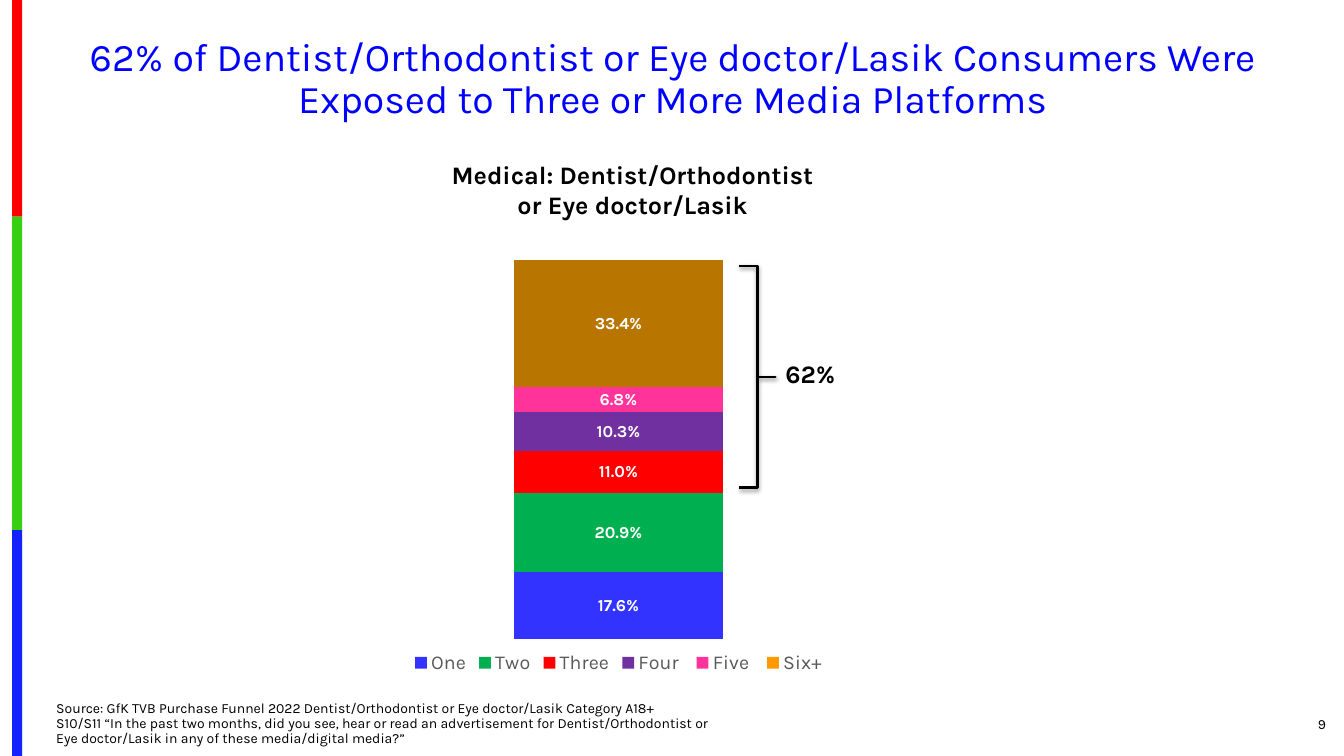
from dataclasses import dataclass

from lxml import etree
from pptx import Presentation
from pptx import util as u
from pptx.chart.data import CategoryChartData
from pptx.dml.color import RGBColor
from pptx.enum import chart as ch, shapes, text
from pptx.oxml import parse_xml
from pptx.oxml.ns import nsdecls, qn

PX = 9144  # 100 px to the inch
FONT = "Karla"
PERCENT = "0.0%"


@dataclass
class Stripe:
    height: int
    color: str


@dataclass
class Platform:
    name: str
    share: float
    color: str
    bar_color: str = ""


@dataclass
class Label:
    lines: list[str]
    box: tuple[int, int, int, int]
    size: int
    color: str = "000000"
    bold: bool = False
    align: text.PP_ALIGN = text.PP_ALIGN.LEFT
    anchor: text.MSO_ANCHOR = text.MSO_ANCHOR.TOP
    spacing: float = 1.0


STRIPES = [Stripe(215, "FE0000"), Stripe(311, "36CF12"), Stripe(224, "1322FE")]

PLATFORMS = [
    Platform("One", 0.176, "3333FF"),
    Platform("Two", 0.209, "00B050"),
    Platform("Three", 0.11, "FF0000"),
    Platform("Four ", 0.103, "7030A0"),
    Platform("Five ", 0.068, "FF3399"),
    Platform("Six+", 0.334, "FF9900", "B87600"),
]

LABELS = [
    Label(["62% of Dentist/Orthodontist or Eye doctor/Lasik Consumers Were "
           "Exposed to Three or More Media Platforms"],
          (46, 32, 1242, 95), 28, "0000FF", align=text.PP_ALIGN.CENTER, spacing=0.9),
    Label(["9"], (1217, 698, 108, 40), 10, align=text.PP_ALIGN.RIGHT,
          anchor=text.MSO_ANCHOR.MIDDLE),
    Label(["Source: GfK TVB Purchase Funnel 2022 Dentist/Orthodontist or "
           "Eye doctor/Lasik Category A18+",
           "S10/S11 “In the past two months, did you see, hear or read an "
           "advertisement for Dentist/Orthodontist or Eye doctor/Lasik in any "
           "of these media/digital media?”"],
          (46, 690, 676, 56), 10, anchor=text.MSO_ANCHOR.BOTTOM, spacing=0.9),
    Label(["Medical: Dentist/Orthodontist ", "or Eye doctor/Lasik "],
          (372, 153, 517, 71), 18, bold=True, align=text.PP_ALIGN.CENTER),
    Label(["62%"], (769, 351, 90, 40), 18, bold=True),
]


def px(*lengths: int) -> list[u.Emu]:
    return [u.Emu(length * PX) for length in lengths]


def paint(color_holder, color: str) -> None:
    """Set a solid colour on a fill."""
    color_holder.solid()
    color_holder.fore_color.rgb = RGBColor.from_string(color)


def style_font(font, size: int, color: str, bold: bool = False) -> None:
    font.name = FONT
    font.size = u.Pt(size)
    font.bold = bold
    paint(font.fill, color)


def draw_stripes(slide, stripes: list[Stripe]) -> None:
    top = 0
    for stripe in stripes:
        bar = slide.shapes.add_shape(shapes.MSO_SHAPE.RECTANGLE,
                                     *px(12, top, 10, stripe.height))
        bar.shadow.inherit = False
        paint(bar.fill, stripe.color)
        bar.line.fill.background()
        top += stripe.height


def draw_label(slide, label: Label) -> None:
    frame = slide.shapes.add_textbox(*px(*label.box)).text_frame
    frame.word_wrap = True
    frame.vertical_anchor = label.anchor
    for index, line in enumerate(label.lines):
        paragraph = frame.add_paragraph() if index else frame.paragraphs[0]
        paragraph.text = line
        paragraph.alignment = label.align
        paragraph.line_spacing = label.spacing
        style_font(paragraph.font, label.size, label.color, label.bold)


def fix_plot_area(chart, **fractions: float) -> None:
    """Pin the inner plot area to fractions (x, y, w, h) of the chart."""
    plot_area = chart.plots[0]._element.getparent()
    for layout in plot_area.findall(qn("c:layout")):
        plot_area.remove(layout)
    modes = '<c:xMode val="edge"/><c:yMode val="edge"/>'
    sizes = "".join(f'<c:{key} val="{value}"/>' for key, value in fractions.items())
    plot_area.insert(0, parse_xml(
        f'<c:layout {nsdecls("c")}><c:manualLayout><c:layoutTarget val="inner"/>'
        f"{modes}{sizes}</c:manualLayout></c:layout>"))


def draw_platform_chart(slide, platforms: list[Platform]) -> None:
    data = CategoryChartData(number_format=PERCENT)
    data.categories = ["1"]
    for platform in platforms:
        data.add_series(platform.name, [platform.share])
    chart = slide.shapes.add_chart(ch.XL_CHART_TYPE.COLUMN_STACKED,
                                   *px(338, 183, 551, 490), data).chart
    chart.has_title = False
    style_font(chart.font, 10, "000000")
    chart.category_axis.visible = False
    shares = chart.value_axis
    shares.visible = False
    shares.has_major_gridlines = False
    shares.minimum_scale, shares.maximum_scale = 0, 1.2

    chart.has_legend = True
    chart.legend.position = ch.XL_LEGEND_POSITION.BOTTOM
    chart.legend.include_in_layout = False
    style_font(chart.legend.font, 14, "595959")

    column = chart.plots[0]
    column.gap_width, column.overlap = 150, 100
    column.vary_by_categories = False
    for series, platform in zip(column.series, platforms):
        paint(series.format.fill, platform.color)
        if platform.bar_color:
            paint(series.points[0].format.fill, platform.bar_color)
        values = series.data_labels
        values.show_value = True
        values.number_format = PERCENT
        values.number_format_is_linked = False
        values.position = ch.XL_LABEL_POSITION.CENTER
        style_font(values.font, 12, "FFFFFF", bold=True)
    fix_plot_area(chart, x=0.03, y=0, w=0.94, h=0.92)


def draw_brace(slide) -> None:
    """Square bracket spanning three or more platforms, with a soft shadow."""
    brace = slide.shapes.add_shape(shapes.MSO_SHAPE.RIGHT_BRACE, *px(733, 264, 36, 220))
    brace.adjustments[0], brace.adjustments[1] = 0, 0.5
    brace.fill.background()
    paint(brace.line.fill, "000000")
    brace.line.width = u.Pt(2)
    brace.shadow.inherit = False
    effects = brace._element.spPr.find(qn("a:effectLst"))
    shadow = etree.SubElement(effects, qn("a:outerShdw"), blurRad="40000",
                              dist="20000", dir="5400000", rotWithShape="0")
    black = etree.SubElement(shadow, qn("a:srgbClr"), val="000000")
    etree.SubElement(black, qn("a:alpha"), val="38000")


def main() -> None:
    deck = Presentation()
    deck.slide_width, deck.slide_height = px(1333, 750)
    slide = deck.slides.add_slide(deck.slide_layouts[6])
    draw_stripes(slide, STRIPES)
    draw_platform_chart(slide, PLATFORMS)
    for label in LABELS:
        draw_label(slide, label)
    draw_brace(slide)
    deck.save("out.pptx")


if __name__ == "__main__":
    main()
